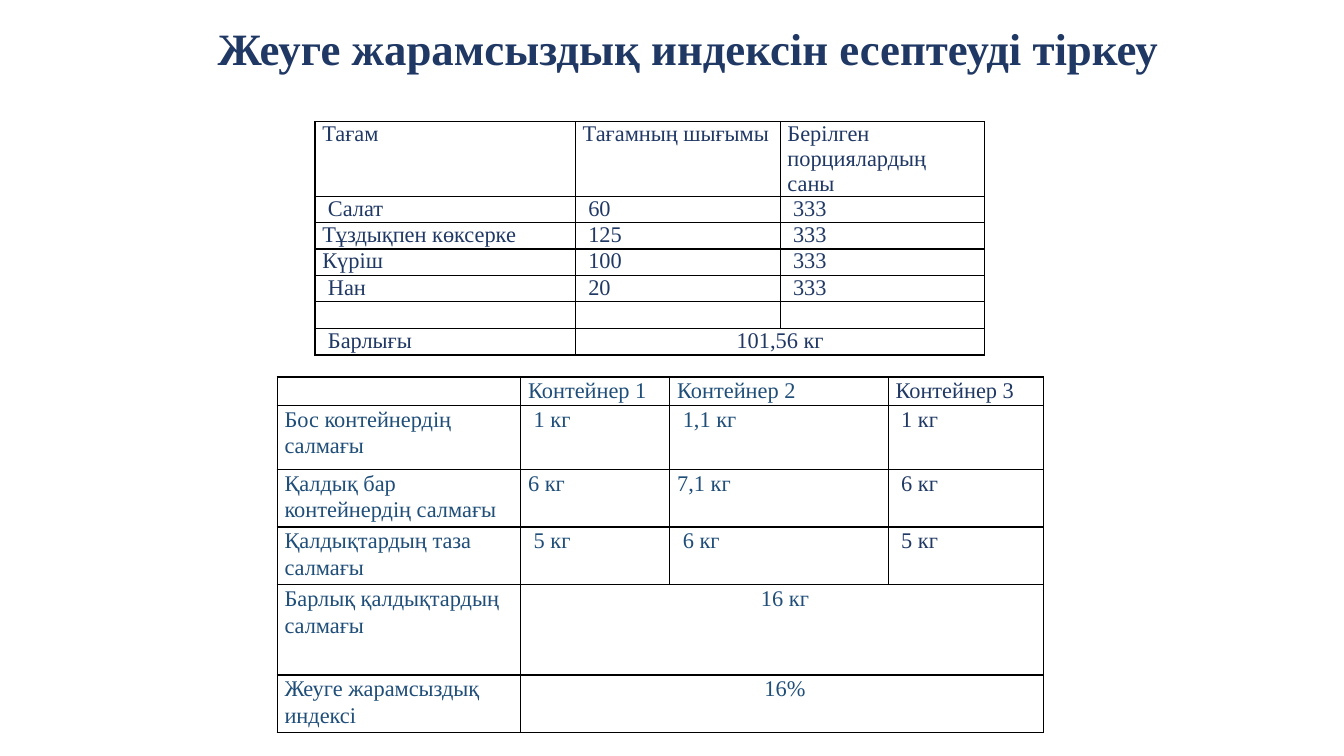
from lxml.etree import SubElement
from pptx import Presentation
from pptx.dml.color import RGBColor
from pptx.enum.text import MSO_ANCHOR, PP_ALIGN
from pptx.oxml import parse_xml
from pptx.oxml.ns import nsdecls, qn
from pptx.util import Pt

EMU_PER_PX = 9525
FONT = "Times New Roman"
NAVY, BLUE, BLACK = "203864", "1F4E79", "000000"
CELL_SIZE = 16
MERGED = None  # cell taken up by the one on its left

DISHES = [
    ["Тағам", "Тағамның шығымы", "Берілген порциялардың саны"],
    [" Салат", " 60", " 333"],
    ["Тұздықпен көксерке", " 125", " 333"],
    ["Күріш", " 100", " 333"],
    [" Нан", " 20", " 333"],
    ["", "", ""],
    [" Барлығы", "101,56 кг", MERGED],
]
CONTAINERS = [
    ["", "Контейнер 1", "Контейнер 2", "Контейнер 3"],
    ["Бос контейнердің салмағы", " 1 кг", " 1,1 кг", " 1 кг"],
    ["Қалдық бар контейнердің салмағы", "6 кг", "7,1 кг", " 6 кг"],
    ["Қалдықтардың таза салмағы", " 5 кг", " 6 кг", " 5 кг"],
    ["Барлық қалдықтардың салмағы", " 16 кг", MERGED, MERGED],
    ["Жеуге жарамсыздық индексі", " 16%", MERGED, MERGED],
]


def px(length):
    return length * EMU_PER_PX


def color(hex_string):
    return RGBColor.from_string(hex_string)


def apply_format(target, values):
    for name, value in values.items():
        setattr(target, name, value)


def write_text(paragraph, text, size, hex_color, bold=False):
    if not text:
        # An empty line keeps the height of the text size
        SubElement(paragraph._p, qn("a:endParaRPr"), sz=str(size * 100))
        return
    run = paragraph.add_run()
    run.text = text
    apply_format(run.font, {"name": FONT, "size": Pt(size), "bold": bold})
    run.font.color.rgb = color(hex_color)


def add_borders(cell):
    properties = cell._tc.get_or_add_tcPr()
    for index, side in enumerate(("lnL", "lnR", "lnT", "lnB")):
        properties.insert(index, parse_xml(
            f'<a:{side} {nsdecls("a")} w="{Pt(1)}"><a:solidFill>'
            f'<a:srgbClr val="{BLACK}"/></a:solidFill></a:{side}>'))


def add_title(slide, box, text):
    title = slide.shapes.title
    left, top, width, height = map(px, box)
    apply_format(title, {"left": left, "top": top,
                         "width": width, "height": height})
    apply_format(title.text_frame, {"word_wrap": True,
                                    "vertical_anchor": MSO_ANCHOR.MIDDLE})
    paragraph = title.text_frame.paragraphs[0]
    paragraph.alignment = PP_ALIGN.CENTER
    write_text(paragraph, text, 32, NAVY, bold=True)


def add_grid(slide, origin, widths, heights, rows, column_colors, paragraph_format):
    left, top = origin
    table = slide.shapes.add_table(
        len(rows), len(widths), px(left), px(top),
        px(sum(widths)), px(sum(heights))).table
    apply_format(table, {"first_row": False, "horz_banding": False})
    for column, width in zip(table.columns, widths):
        column.width = px(width)
    for row, height in zip(table.rows, heights):
        row.height = px(height)

    for row_index, texts in enumerate(rows):
        spans = MERGED in texts
        for column_index, text in enumerate(texts):
            cell = table.cell(row_index, column_index)
            apply_format(cell, {"margin_left": px(7), "margin_right": px(7),
                                "margin_top": 0, "margin_bottom": 0})
            cell.fill.background()
            add_borders(cell)
            if text is MERGED:
                continue
            paragraph = cell.text_frame.paragraphs[0]
            apply_format(paragraph, paragraph_format)
            if spans and column_index == 1:
                paragraph.alignment = PP_ALIGN.CENTER
            write_text(paragraph, text, CELL_SIZE, column_colors[column_index])
        if spans:
            table.cell(row_index, 1).merge(table.cell(row_index, len(widths) - 1))


def main():
    presentation = Presentation()
    apply_format(presentation, {"slide_width": px(1280), "slide_height": px(720)})
    slide = presentation.slides.add_slide(presentation.slide_layouts[5])

    add_title(slide, (97, 15, 1117, 61),
              "Жеуге жарамсыздық индексін есептеуді тіркеу")
    # Dishes and portions
    add_grid(slide, (300, 116), [248, 195, 195], [71] + [25] * 6, DISHES,
             [NAVY] * 3, {"alignment": PP_ALIGN.JUSTIFY})
    # Container weights and the index
    add_grid(slide, (264, 359), [232, 142, 208, 148], [27, 61, 55, 55, 86, 55],
             CONTAINERS, [BLUE] * 3 + [NAVY],
             {"alignment": PP_ALIGN.LEFT, "line_spacing": 1.07,
              "space_after": Pt(8)})
    presentation.save("out.pptx")


if __name__ == "__main__":
    main()
